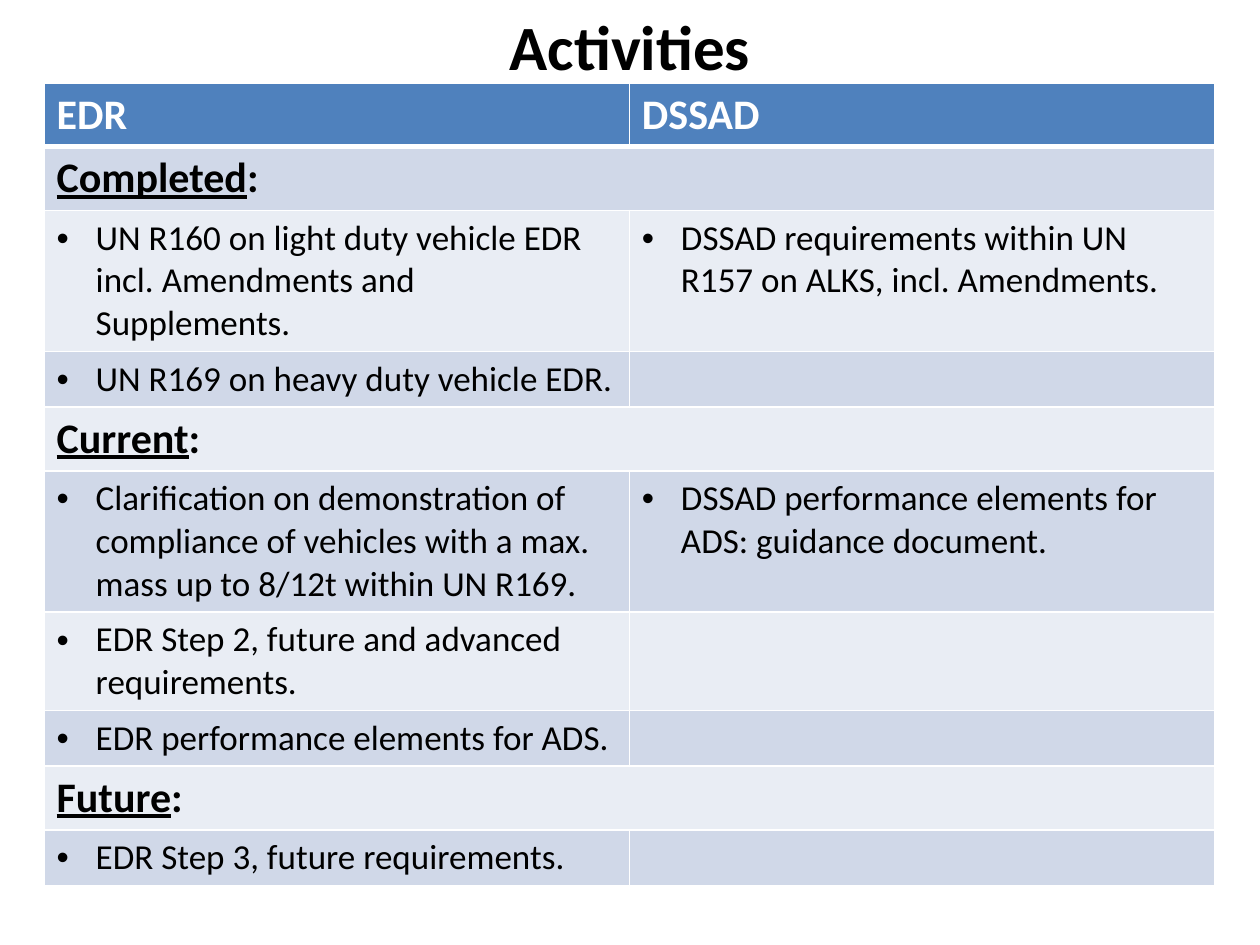
from lxml.etree import SubElement
from pptx import Presentation
from pptx.dml.color import RGBColor
from pptx.enum.text import MSO_ANCHOR, PP_ALIGN
from pptx.oxml.ns import qn
from pptx.util import Inches, Pt

TITLE = "Activities"
HEADS = ("EDR", "DSSAD")
SECTIONS = [
    ("Completed", [
        ("UN R160 on light duty vehicle EDR\nincl. Amendments and Supplements.",
         "DSSAD requirements within UN R157 on ALKS, incl. Amendments.", 3),
        ("UN R169 on heavy duty vehicle EDR.", "", 1),
    ]),
    ("Current", [
        ("Clarification on demonstration of compliance of vehicles with a max. "
         "mass up to 8/12t within UN R169.",
         "DSSAD performance elements for ADS: guidance document.", 3),
        ("EDR Step 2, future and advanced requirements.", "", 2),
        ("EDR performance elements for ADS.", "", 1),
    ]),
    ("Future", [("EDR Step 3, future requirements.", "", 1)]),
]
FONT, BLACK, WHITE, BLUE = "Calibri", "000000", "FFFFFF", "4F81BD"
BANDS = ("D0D8E8", "E9EDF4")
BIG, SMALL = 24, 20
LEFT, TOP, WIDTH = 0.35, 0.66, 9.29
PAD, LINE = 0.1, 0.34


def style(para, size, color=BLACK, bold=False):
    font = para.font
    font.name, font.size, font.bold = FONT, Pt(size), bold
    font.color.rgb = RGBColor.from_string(color)


def paint(cell, color, base=1):
    props = cell._tc.get_or_add_tcPr()
    for side, width in (("L", 1), ("R", 1), ("T", 1), ("B", base)):
        line = SubElement(props, qn(f"a:ln{side}"), w=str(Pt(width)))
        SubElement(SubElement(line, qn("a:solidFill")), qn("a:srgbClr"), val=WHITE)
    cell.fill.solid()
    cell.fill.fore_color.rgb = RGBColor.from_string(color)


def bullet(para):
    props = para._p.get_or_add_pPr()
    props.set("marL", str(Inches(0.31)))
    props.set("indent", str(Inches(-0.31)))
    SubElement(SubElement(props, qn("a:buClr")), qn("a:srgbClr"), val=BLACK)
    SubElement(props, qn("a:buFont"), typeface="Arial")
    SubElement(props, qn("a:buChar"), char="•")


def add_title(slide):
    frame = slide.shapes.add_textbox(0, Inches(0.13), Inches(10), Inches(0.46)).text_frame
    frame.word_wrap = True
    frame.vertical_anchor = MSO_ANCHOR.MIDDLE
    para = frame.paragraphs[0]
    para.text, para.alignment = TITLE, PP_ALIGN.CENTER
    style(para, 36, bold=True)


def add_head(table):
    for cell, text in zip(table.rows[0].cells, HEADS):
        paint(cell, BLUE, 3)
        para = cell.text_frame.paragraphs[0]
        para.text = text
        style(para, BIG, WHITE, True)


def add_section(table, row, name):
    cell = table.cell(row, 0)
    cell.merge(table.cell(row, 1))
    para = cell.text_frame.paragraphs[0]
    para.space_before = Pt(6.4)
    for text, under in ((name, True), (":", False)):
        run = para.add_run()
        run.text, run.font.underline = text, under
    style(para, BIG, bold=True)


def add_items(table, row, texts):
    for col, text in enumerate(texts):
        para = table.cell(row, col).text_frame.paragraphs[0]
        style(para, SMALL)
        if text:
            para.text = text
            if col == 0:
                para.space_before = Pt(6.4)
            bullet(para)


def add_grid(slide):
    rows = []
    for name, items in SECTIONS:
        rows += [(name,)] + items
    highs = [0.5] + [0.51 if len(r) == 1 else PAD + LINE * r[2] for r in rows]
    table = slide.shapes.add_table(len(highs), 2, Inches(LEFT), Inches(TOP),
                                   Inches(WIDTH), Inches(sum(highs))).table
    for row, high in zip(table.rows, highs):
        row.height = Inches(high)
    add_head(table)
    for num, row in enumerate(rows, 1):
        for cell in table.rows[num].cells:
            paint(cell, BANDS[(num - 1) % 2])
        if len(row) == 1:
            add_section(table, num, row[0])
        else:
            add_items(table, num, row[:2])


def main():
    """Build the activities slide with its table of past, present and future work."""
    deck = Presentation()
    deck.slide_width, deck.slide_height = Inches(10), Inches(7.5)
    slide = deck.slides.add_slide(deck.slide_layouts[6])
    add_title(slide)
    add_grid(slide)
    deck.save("out.pptx")


if __name__ == "__main__":
    main()
